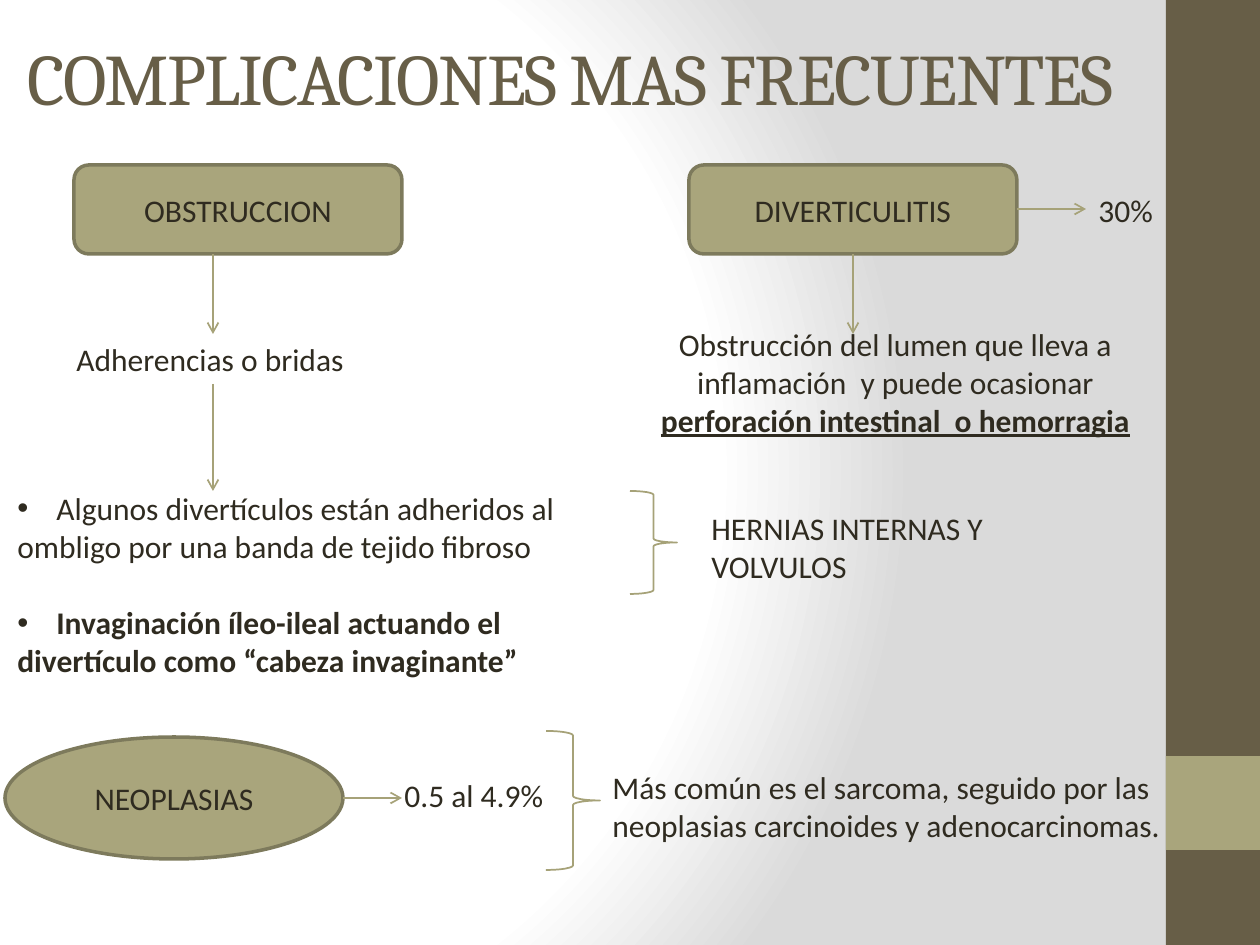
from dataclasses import dataclass

from lxml import etree
from pptx import Presentation
from pptx.dml.color import RGBColor
from pptx.enum.shapes import MSO_CONNECTOR, MSO_SHAPE
from pptx.enum.text import MSO_ANCHOR, MSO_AUTO_SIZE, PP_ALIGN
from pptx.oxml import parse_xml
from pptx.oxml.ns import nsdecls, qn
from pptx.util import Pt

PX = 914400 / 126
WIDTH, HEIGHT = 1260, 945
LEFT, CENTER = PP_ALIGN.LEFT, PP_ALIGN.CENTER
MIDDLE, TOP = MSO_ANCHOR.MIDDLE, MSO_ANCHOR.TOP
RECT, ROUNDED = MSO_SHAPE.RECTANGLE, MSO_SHAPE.ROUNDED_RECTANGLE
OVAL, BRACE = MSO_SHAPE.OVAL, MSO_SHAPE.RIGHT_BRACE
STRAIGHT = MSO_CONNECTOR.STRAIGHT
BULLET_INDENT = 39

COLORS = {
    "band": "675E47",
    "olive": "A9A57C",
    "outline": "7D7A5C",
    "arrow": "A6A278",
    "text": "2F2B20",
}


@dataclass
class Box:
    left: int
    top: int
    width: int
    height: int


@dataclass
class Line:
    text: str
    bold: bool = False
    underline: bool = False
    bullet: bool = False
    space_before: int = 0


@dataclass
class Topic:
    name: str
    kind: int
    box: Box


@dataclass
class Note:
    lines: list[Line]
    box: Box
    align: int = LEFT


@dataclass
class Arrow:
    x1: int
    y1: int
    x2: int
    y2: int


TOPICS = [
    Topic("OBSTRUCCION", ROUNDED, Box(74, 165, 328, 89)),
    Topic("DIVERTICULITIS", ROUNDED, Box(689, 165, 328, 89)),
    Topic("NEOPLASIAS", OVAL, Box(5, 737, 338, 122)),
]
NOTES = [
    Note([Line("Adherencias o bridas")], Box(64, 334, 296, 50)),
    Note([
        Line("Algunos divertículos están adheridos al", bullet=True),
        Line("ombligo por una banda de tejido fibroso"),
        Line("Invaginación íleo-ileal actuando el", bold=True, bullet=True, space_before=22),
        Line("divertículo como “cabeza invaginante”", bold=True),
    ], Box(5, 483, 570, 204)),
    Note([
        Line("Obstrucción del lumen que lleva a"),
        Line("inflamación  y puede ocasionar"),
        Line("perforación intestinal  o hemorragia", bold=True, underline=True),
    ], Box(581, 319, 629, 165), CENTER),
    Note([Line("0.5 al 4.9%")], Box(392, 770, 180, 50)),
    Note([
        Line("Más común es el sarcoma, seguido por las"),
        Line("neoplasias carcinoides y adenocarcinomas."),
    ], Box(600, 762, 600, 127)),
    Note([Line("30%")], Box(1086, 185, 96, 50)),
    Note([Line("HERNIAS INTERNAS Y"), Line("VOLVULOS")], Box(699, 503, 403, 89)),
]
ARROWS = [
    Arrow(213, 254, 213, 334),
    Arrow(213, 384, 213, 491),
    Arrow(853, 254, 853, 334),
    Arrow(343, 798, 402, 798),
    Arrow(1017, 209, 1086, 209),
]
BRACES = [Box(546, 731, 54, 139), Box(630, 491, 47, 103)]


def px(length: int) -> int:
    return round(length * PX)


def place(box: Box) -> tuple[int, ...]:
    return px(box.left), px(box.top), px(box.width), px(box.height)


def rgb(name: str) -> RGBColor:
    return RGBColor.from_string(COLORS[name])


def add_bullet(paragraph) -> None:
    properties = paragraph._p.get_or_add_pPr()
    properties.set("marL", str(px(BULLET_INDENT)))
    properties.set("indent", str(-px(BULLET_INDENT)))
    for tag, key, value in (("a:buFont", "typeface", "Arial"), ("a:buChar", "char", "•")):
        etree.SubElement(properties, qn(tag)).set(key, value)


def write(frame, lines: list[Line], *, font="Calibri", size=18, color="text",
          align=LEFT, anchor=TOP, spacing=0) -> None:
    """Fill a text frame, one paragraph per line; spacing is in points."""
    frame.word_wrap = True
    frame.auto_size = MSO_AUTO_SIZE.NONE
    frame.vertical_anchor = anchor
    for index, line in enumerate(lines):
        paragraph = frame.add_paragraph() if index else frame.paragraphs[0]
        paragraph.alignment = align
        if line.space_before:
            paragraph.space_before = Pt(line.space_before)
        if line.bullet:
            add_bullet(paragraph)
        run = paragraph.add_run()
        run.text = line.text
        run.font.name = font
        run.font.size = Pt(size)
        run.font.bold = line.bold
        run.font.underline = line.underline
        run.font.color.rgb = rgb(color)
        if spacing:
            run._r.get_or_add_rPr().set("spc", str(spacing * 100))


def add_figure(slide, kind: int, box: Box, fill="", outline="", weight=1):
    figure = slide.shapes.add_shape(kind, *place(box))
    figure.shadow.inherit = False
    if fill:
        figure.fill.solid()
        figure.fill.fore_color.rgb = rgb(fill)
    else:
        figure.fill.background()
    if outline:
        figure.line.color.rgb = rgb(outline)
        figure.line.width = Pt(weight)
    else:
        figure.line.fill.background()
    return figure


def add_arrow(slide, arrow: Arrow) -> None:
    connector = slide.shapes.add_connector(
        STRAIGHT, px(arrow.x1), px(arrow.y1), px(arrow.x2), px(arrow.y2))
    connector.line.color.rgb = rgb("arrow")
    connector.line.width = Pt(1)
    etree.SubElement(connector.line._get_or_add_ln(), qn("a:tailEnd")).set("type", "arrow")
    etree.SubElement(connector._element.spPr, qn("a:effectLst"))


def paint_background(slide) -> None:
    """Radial gradient from white on the left to grey on the right."""
    slide.background.fill.gradient()
    default = slide.element.find(".//" + qn("a:gradFill"))
    stops = "".join(
        f'<a:gs pos="{position}000"><a:srgbClr val="{color}"/></a:gs>'
        for position, color in ((0, "FFFFFF"), (75, "FFFFFF"), (100, "DADADA")))
    radial = parse_xml(
        f'<a:gradFill {nsdecls("a")} rotWithShape="1"><a:gsLst>{stops}</a:gsLst>'
        '<a:path path="circle"><a:fillToRect l="20000" t="50000" r="100000" b="50000"/>'
        '</a:path></a:gradFill>')
    default.getparent().replace(default, radial)


def main() -> None:
    deck = Presentation()
    deck.slide_width, deck.slide_height = px(WIDTH), px(HEIGHT)
    slide = deck.slides.add_slide(deck.slide_layouts[5])
    paint_background(slide)
    add_figure(slide, RECT, Box(1166, 0, 94, HEIGHT), fill="band")
    add_figure(slide, RECT, Box(1166, 756, 94, 94), fill="olive")

    title = slide.shapes.title
    title.left, title.top, title.width, title.height = place(Box(15, -2, 1143, 157))
    write(title.text_frame, [Line("COMPLICACIONES MAS FRECUENTES")],
          font="Cambria", size=41.4, color="band", anchor=MIDDLE, spacing=-1)

    for topic in TOPICS:
        figure = add_figure(slide, topic.kind, topic.box, "olive", "outline", 2)
        write(figure.text_frame, [Line(topic.name)], align=CENTER, anchor=MIDDLE)
    for arrow in ARROWS:
        add_arrow(slide, arrow)
    for brace in BRACES:
        add_figure(slide, BRACE, brace, outline="arrow")
    for note in NOTES:
        textbox = slide.shapes.add_textbox(*place(note.box))
        write(textbox.text_frame, note.lines, align=note.align)
    deck.save("out.pptx")


if __name__ == "__main__":
    main()
